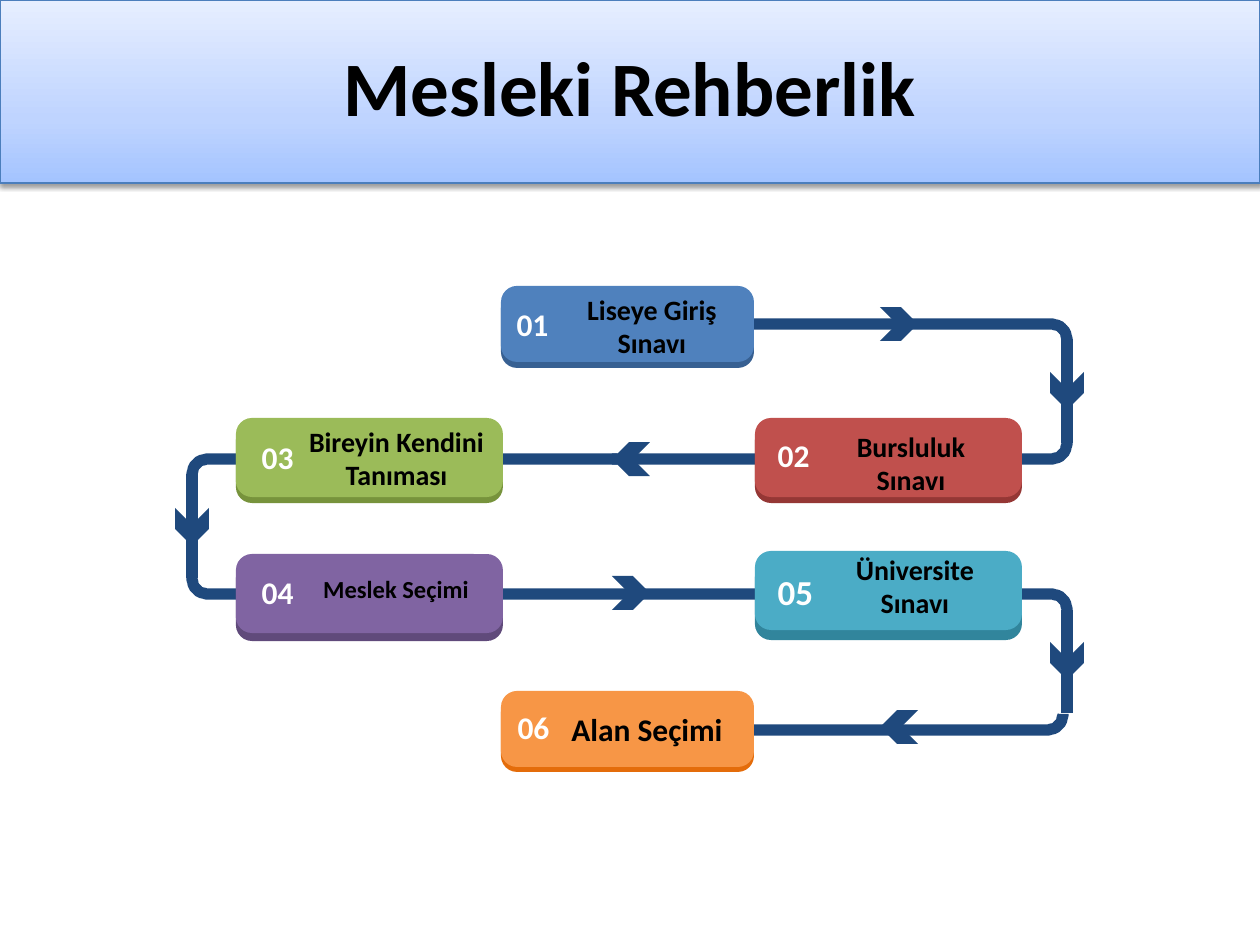
from math import cos, pi, sin

from lxml import etree
from pptx import Presentation
from pptx.dml.color import RGBColor
from pptx.enum.shapes import MSO_SHAPE as Shape
from pptx.enum.text import MSO_ANCHOR as Anchor, MSO_AUTO_SIZE as AutoSize, PP_ALIGN as Align
from pptx.util import Pt

EMU_PER_PX = 914400 / 126
RADIUS = 16
NAMESPACE = "http://schemas.openxmlformats.org/drawingml/2006/main"
COLORS = {
    "track": "1F497D", "black": "000000", "white": "FFFFFF", "banner line": "4B7EBC",
    "blue": "4F81BD", "dark blue": "376092", "red": "C0504D", "dark red": "953735",
    "green": "9BBB59", "dark green": "77933C", "purple": "8064A2", "dark purple": "604A7B",
    "teal": "4BACC6", "dark teal": "31859C", "orange": "F79646", "dark orange": "E46C0A",
}
BANNER_STOPS = [(0, "A4C4FF"), (35, "BFD4FF"), (100, "E6EEFF")]

# Face box, colour, depth of the dark edge, then number and label:
# (text, size, box relative to the face)
CARDS = [
    ((501, 286, 253, 76), "blue", 6,
     ("01", 18, (-2, 13, 67, 50)), ("Liseye Giriş Sınavı", 16, (56, 0, 190, 81))),
    ((755, 418, 267, 79), "red", 6,
     ("02", 18, (5, 12, 67, 50)), ("Bursluluk\nSınavı", 16, (61, 5, 190, 81))),
    ((236, 418, 267, 79), "green", 6,
     ("03", 18, (8, 14, 67, 50)), ("Bireyin Kendini\nTanıması", 16, (59, 0, 203, 81))),
    ((236, 554, 267, 79), "purple", 8,
     ("04", 18, (8, 13, 67, 50)), ("Meslek Seçimi", 14, (65, 14, 190, 43))),
    ((755, 551, 267, 79), "teal", 10,
     ("05", 20, (7, 13, 67, 55)), ("Üniversite Sınavı", 16, (65, -5, 190, 81))),
    ((501, 691, 253, 76), "orange", 5,
     ("06", 18, (-1, 11, 67, 50)), ("Alan Seçimi", 18, (52, 13, 188, 50))),
]
# Straight end x, turning x, rail y, vertical direction after the turn
RAILS = [(614, 1063, 730, -1), (833, 1067, 594, 1), (612, 1067, 459, -1),
         (656, 1067, 324, 1), (1001, 192, 594, -1), (617, 192, 459, 1)]
# x, top, bottom
UPRIGHTS = [(1067, 339, 443), (192, 474, 578), (1067, 610, 713)]
# Centre x, centre y, rotation
CHEVRONS = [(899, 324, 0), (1067, 391, 90), (631, 459, 180), (192, 527, 90),
            (1067, 661, 90), (631, 593, 0), (899, 727, 180)]


def px(value):
    return round(value * EMU_PER_PX)


def color(name):
    return RGBColor.from_string(COLORS[name])


def add_filled(shapes, kind, box, color_name):
    shape = shapes.add_shape(kind, *map(px, box))
    shape.shadow.inherit = False
    shape.fill.solid()
    shape.fill.fore_color.rgb = color(color_name)
    shape.line.fill.background()
    return shape


def format_text(text_frame, text, size, color_name):
    text_frame.text = text
    text_frame.word_wrap = True
    for paragraph in text_frame.paragraphs:
        paragraph.alignment = Align.CENTER
        font = paragraph.runs[0].font
        font.name, font.size, font.bold = "Calibri", Pt(size), True
        font.color.rgb = color(color_name)


def add_banner(slide, box):
    title = slide.shapes.title
    title.left, title.top, title.width, title.height = map(px, box)
    format_text(title.text_frame, "Mesleki Rehberlik", 44, "black")
    title.text_frame.vertical_anchor = Anchor.MIDDLE
    title.text_frame.paragraphs[0].line_spacing = 0.9
    # Three-stop gradient and soft shadow
    stops = "".join(f'<a:gs pos="{position * 1000}"><a:srgbClr val="{value}"/></a:gs>'
                    for position, value in BANNER_STOPS)
    parts = [
        '<a:prstGeom {ns} prst="rect"><a:avLst/></a:prstGeom>',
        '<a:gradFill {ns} rotWithShape="1"><a:gsLst>' + stops +
        '</a:gsLst><a:lin ang="16200000" scaled="0"/></a:gradFill>',
        '<a:effectLst {ns}><a:outerShdw blurRad="40000" dist="20000" dir="5400000" '
        'rotWithShape="0"><a:srgbClr val="000000"><a:alpha val="38000"/></a:srgbClr>'
        '</a:outerShdw></a:effectLst>',
    ]
    properties = title.element.spPr
    for part in parts:
        properties.append(etree.fromstring(part.format(ns=f'xmlns:a="{NAMESPACE}"')))
    title.line.color.rgb = color("banner line")
    title.line.width = Pt(0.75)


def add_track(slide, points):
    builder = slide.shapes.build_freeform(*points[0], scale=EMU_PER_PX)
    builder.add_line_segments(points[1:], close=False)
    track = builder.convert_to_shape()
    track.shadow.inherit = False
    track.fill.background()
    track.line.color.rgb = color("track")
    track.line.width = Pt(6.38)


def rail_points(end_x, turn_x, y, direction, steps=12):
    """A straight rail followed by a quarter-circle turn."""
    side = 1 if turn_x > end_x else -1
    angles = [pi / 2 * step / steps for step in range(steps + 1)]
    turn = [(turn_x - side * RADIUS * (1 - sin(angle)),
             y + direction * RADIUS * (1 - cos(angle))) for angle in angles]
    return [(end_x, y)] + turn


def add_tracks(slide):
    for rail in RAILS:
        add_track(slide, rail_points(*rail))
    for x, top, bottom in UPRIGHTS:
        add_track(slide, [(x, top), (x, bottom)])
    width, height = 38, 34
    for x, y, rotation in CHEVRONS:
        box = (x - width / 2, y - height / 2, width, height)
        add_filled(slide.shapes, Shape.CHEVRON, box, "track").rotation = rotation


def add_card(slide, box, color_name, depth, number, label):
    left, top, width, height = box
    shapes = slide.shapes.add_group_shape().shapes
    # Dark edge below, then the face
    for offset, fill in ((depth, "dark " + color_name), (0, color_name)):
        face = add_filled(shapes, Shape.ROUNDED_RECTANGLE,
                          (left, top + offset, width, height), fill)
        face.adjustments[0] = RADIUS / height
    # Number and label
    for (text, size, (x, y, w, h)), ink in ((number, "white"), (label, "black")):
        text_box = shapes.add_textbox(*map(px, (left + x, top + y, w, h)))
        format_text(text_box.text_frame, text, size, ink)
        text_box.text_frame.auto_size = AutoSize.SHAPE_TO_FIT_TEXT


def main():
    presentation = Presentation()
    presentation.slide_width, presentation.slide_height = px(1260), px(945)
    slide = presentation.slides.add_slide(presentation.slide_layouts[5])
    add_banner(slide, (0, 0, 1260, 183))
    add_tracks(slide)
    for card in CARDS:
        add_card(slide, *card)
    presentation.save("out.pptx")


if __name__ == "__main__":
    main()
